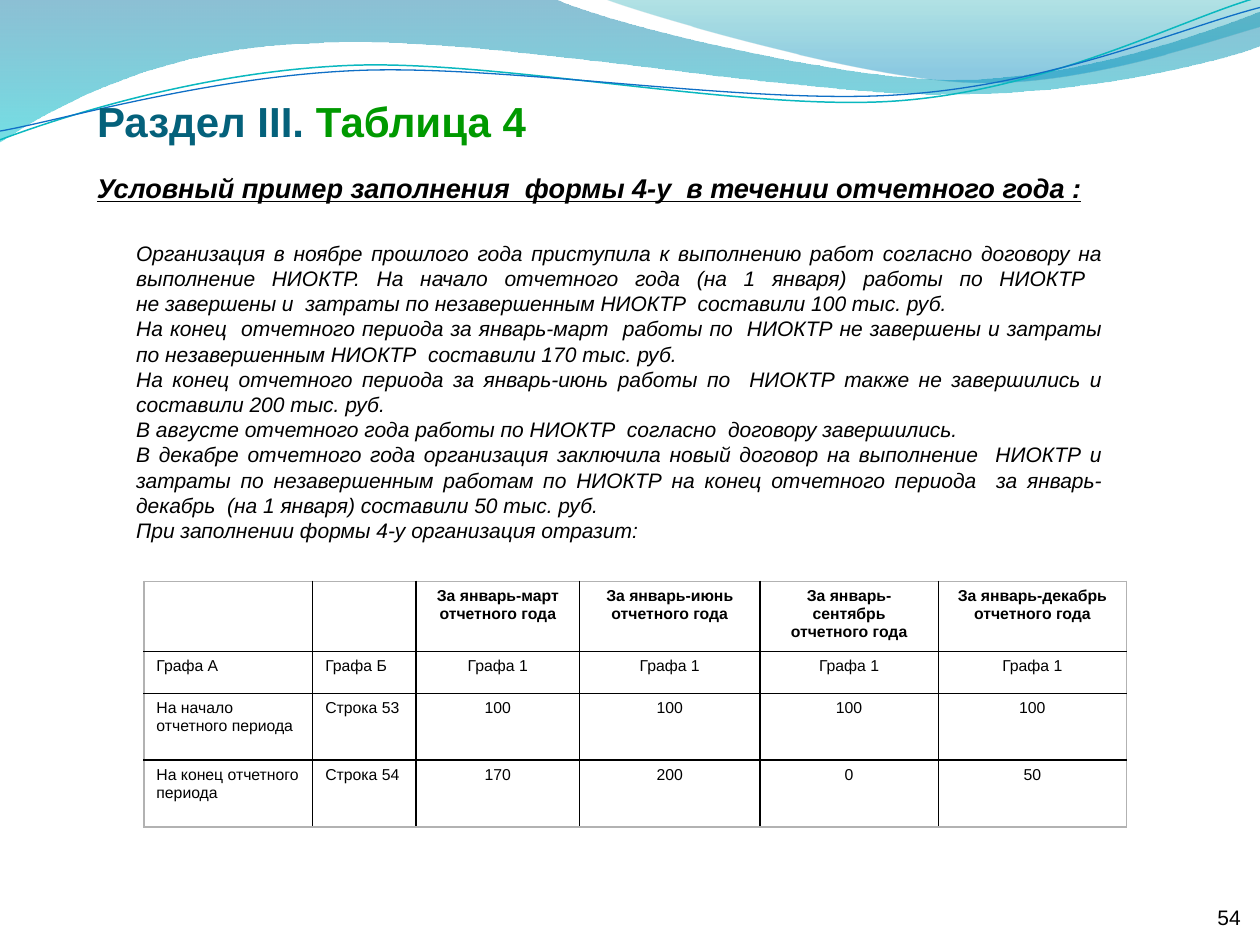
from math import cos, radians, sin

from lxml import etree
from pptx import Presentation
from pptx.dml.color import RGBColor
from pptx.enum.text import MSO_ANCHOR, MSO_AUTO_SIZE, PP_ALIGN
from pptx.oxml.ns import qn
from pptx.util import Pt

COLORS = {"black": "000000", "heading": "04617B", "green": "009900", "edge": "B2B2B2",
          "deep": "0074A1", "aqua": "00C6CF", "teal": "00A1A9", "sky": "008BBF",
          "line_teal": "0AB8BF", "line_blue": "0F6FC6"}

TITLE = [("Раздел III. ", "heading"), ("Таблица 4", "green")]
SUBTITLE = "Условный пример заполнения  формы 4-у  в течении отчетного года :"
EXAMPLE = [
    "Организация в ноябре прошлого года приступила к выполнению работ согласно договору на "
    "выполнение НИОКТР. На начало отчетного года (на 1 января) работы по НИОКТР \n"
    "не завершены и  затраты по незавершенным НИОКТР  составили 100 тыс. руб. ",
    "На конец  отчетного периода за январь-март  работы по  НИОКТР не завершены и затраты "
    "по незавершенным НИОКТР  составили 170 тыс. руб.",
    "На конец отчетного периода за январь-июнь работы по  НИОКТР также не завершились и "
    "составили 200 тыс. руб.",
    "В августе отчетного года работы по НИОКТР  согласно  договору завершились.   ",
    "В декабре отчетного года организация заключила новый договор на выполнение  НИОКТР и "
    "затраты по незавершенным работам по НИОКТР на конец отчетного периода  за "
    "январь-декабрь  (на 1 января) составили 50 тыс. руб.",
    "При заполнении формы 4-у организация отразит:",
]
PAGE_NUMBER = "54"
PERIODS = ["март", "июнь", "сентябрь", "декабрь"]
ROWS = [
    ["", ""] + [f"За январь-{month} отчетного года" for month in PERIODS],
    ["Графа А", "Графа Б"] + ["Графа 1"] * len(PERIODS),
    ["На начало отчетного периода", "Строка 53", "100", "100", "100", "100"],
    ["На конец отчетного периода", "Строка 54", "170", "200", "0", "50"],
]
COLUMN_WIDTHS = [96.5, 59, 93.5, 103, 102, 107.5]
ROW_HEIGHTS = [40, 24, 38, 38.5]

# Each outline is a list of steps: two numbers for a straight line, six for a Bezier curve.
BANDS = [
    ([(0, 0), (316.8, -0.7), (342.7, 12.2, 478.1, 45.4, 545.8, 45.4),
      (614.2, 45.4, 689.8, 18.7, 720, 6.5), (720.7, 25.9),
      (707.8, 31.7, 626.4, 54.7, 537.1, 54), (447.8, 54, 275, 20.2, 185, 24.5),
      (92.9, 25.9, 33.1, 59.8, -0.7, 81.4)],
     [(0, "deep", 45), (1, "aqua", 55)]),
    ([(344.9, -0.7), (366.5, 7.9, 491, 44.6, 553.7, 46.8),
      (616.3, 49.7, 691.9, 23, 720, 15.1), (720, 0)],
     [(0, "teal", 30), (0.8, "sky", 45)]),
]
WAVES = [
    ([(0, 79.9), (34.6, 67, 113.8, 41, 199.4, 37.4),
      (284.4, 33.8, 427, 64.1, 513.4, 57.6), (599.8, 51.1, 675.4, 10.8, 718.6, -1.4)],
     "line_teal", 0.85, (359.3, 41.4)),
    ([(0, 74.9), (33.8, 69.1, 118.1, 43.9, 203.8, 40.3),
      (290.2, 36.7, 429.8, 60.5, 516.2, 54), (601.9, 48.2, 677.5, 15.1, 720, 4.3)],
     "line_blue", 0.75, (360, 42.5)),
]
WAVE_TILT = -2.7


def color(name):
    return RGBColor.from_string(COLORS[name])


def turn(step, degrees, center):
    """Rotate every point of a step about a center."""
    c, s = cos(radians(degrees)), sin(radians(degrees))
    turned = []
    for x, y in zip(step[::2], step[1::2]):
        dx, dy = x - center[0], y - center[1]
        turned += [center[0] + dx * c - dy * s, center[1] + dx * s + dy * c]
    return turned


def add_outline(slide, steps, close):
    """Build a freeform, then join each curve's three points into one Bezier segment."""
    points = [(Pt(x), Pt(y)) for step in steps for x, y in zip(step[::2], step[1::2])]
    builder = slide.shapes.build_freeform(*points[0])
    builder.add_line_segments(points[1:], close=close)
    outline = builder.convert_to_shape()
    outline.shadow.inherit = False
    segments = iter(list(outline.element.iter(qn("a:lnTo"))))
    for step in steps[1:]:
        segment = next(segments)
        if len(step) == 6:
            segment.tag = qn("a:cubicBezTo")
            for _ in range(2):
                extra = next(segments)
                segment.append(extra[0])
                extra.getparent().remove(extra)
    return outline


def add_band(slide, steps, stops):
    band = add_outline(slide, steps, True)
    band.line.fill.background()
    band.fill.gradient()
    band.fill.gradient_angle = 270
    for stop, (position, name, _) in zip(band.fill.gradient_stops, stops):
        stop.position = position
        stop.color.rgb = color(name)
    for gs, (_, _, opacity) in zip(band.element.iter(qn("a:gs")), stops):
        etree.SubElement(gs[0], qn("a:alpha"), val=str(opacity * 1000))


def add_wave(slide, steps, name, width, center):
    wave = add_outline(slide, [turn(step, -WAVE_TILT, center) for step in steps], False)
    wave.rotation = WAVE_TILT
    wave.fill.background()
    wave.line.color.rgb = color(name)
    wave.line.width = Pt(width)


def write(frame, paragraphs, size, align=PP_ALIGN.LEFT, bold=False, italic=False,
          underline=False, spacing=None):
    """Fill a text frame; a paragraph is a string or a list of (text, colour) runs."""
    frame.word_wrap = True
    for i, content in enumerate(paragraphs):
        paragraph = frame.paragraphs[0] if i == 0 else frame.add_paragraph()
        paragraph.alignment = align
        paragraph.font.size = Pt(size)
        if spacing:
            paragraph.line_spacing = Pt(spacing)
        runs = [(content, "black")] if isinstance(content, str) else content
        for text, name in runs:
            for j, line in enumerate(text.split("\n")):
                if j:
                    paragraph.add_line_break()
                run = paragraph.add_run()
                run.text = line
                font = run.font
                font.name, font.size = "Arial", Pt(size)
                font.bold, font.italic, font.underline = bold, italic, underline
                font.color.rgb = color(name)


def add_text(slide, box, paragraphs, size, **style):
    frame = slide.shapes.add_textbox(*map(Pt, box)).text_frame
    write(frame, paragraphs, size, **style)
    return frame


def set_border(cell, side, name):
    border = etree.SubElement(cell._tc.get_or_add_tcPr(), qn(f"a:{side}"), w=str(Pt(1)))
    fill = etree.SubElement(border, qn("a:solidFill"))
    etree.SubElement(fill, qn("a:srgbClr"), val=COLORS[name])


def add_costs_table(slide, left, top):
    table = slide.shapes.add_table(len(ROWS), len(COLUMN_WIDTHS), Pt(left), Pt(top),
                                   Pt(sum(COLUMN_WIDTHS)), Pt(sum(ROW_HEIGHTS))).table
    table.first_row = table.horz_banding = False
    for column, width in zip(table.columns, COLUMN_WIDTHS):
        column.width = Pt(width)
    last_row, last_column = len(ROWS) - 1, len(COLUMN_WIDTHS) - 1
    for r, row in enumerate(ROWS):
        table.rows[r].height = Pt(ROW_HEIGHTS[r])
        for c, text in enumerate(row):
            cell = table.cell(r, c)
            write(cell.text_frame, [text] if text else [[]], 9, bold=r == 0,
                  align=PP_ALIGN.CENTER if c > 1 else PP_ALIGN.LEFT)
            outer = {"lnL": c == 0, "lnR": c == last_column, "lnT": r == 0, "lnB": r == last_row}
            for side, is_outer in outer.items():
                set_border(cell, side, "edge" if is_outer else "black")
            cell.fill.background()


def main():
    deck = Presentation()
    deck.slide_width, deck.slide_height = Pt(720), Pt(540)
    slide = deck.slides.add_slide(deck.slide_layouts[5])
    for band in BANDS:
        add_band(slide, *band)
    for wave in WAVES:
        add_wave(slide, *wave)

    title = slide.shapes.title
    title.left, title.top, title.width, title.height = map(Pt, (48.25, 54.5, 652, 32.5))
    title.text_frame.vertical_anchor = MSO_ANCHOR.TOP
    title.text_frame.auto_size = MSO_AUTO_SIZE.NONE
    write(title.text_frame, [TITLE], 24, bold=True, spacing=25)
    title.element.getparent().append(title.element)  # in front of the waves

    add_text(slide, (48.25, 94.3, 620, 34), [SUBTITLE], 15.5,
             bold=True, italic=True, underline=True)
    add_text(slide, (70.75, 133.8, 566.75, 181.5), EXAMPLE, 12,
             align=PP_ALIGN.JUSTIFY, italic=True)
    add_costs_table(slide, 82.2, 332.2)
    number = add_text(slide, (649.5, 502.5, 59.5, 29), [PAGE_NUMBER], 12, align=PP_ALIGN.RIGHT)
    number.vertical_anchor = MSO_ANCHOR.BOTTOM
    number.margin_left = number.margin_right = number.margin_top = number.margin_bottom = 0
    deck.save("out.pptx")


if __name__ == "__main__":
    main()
